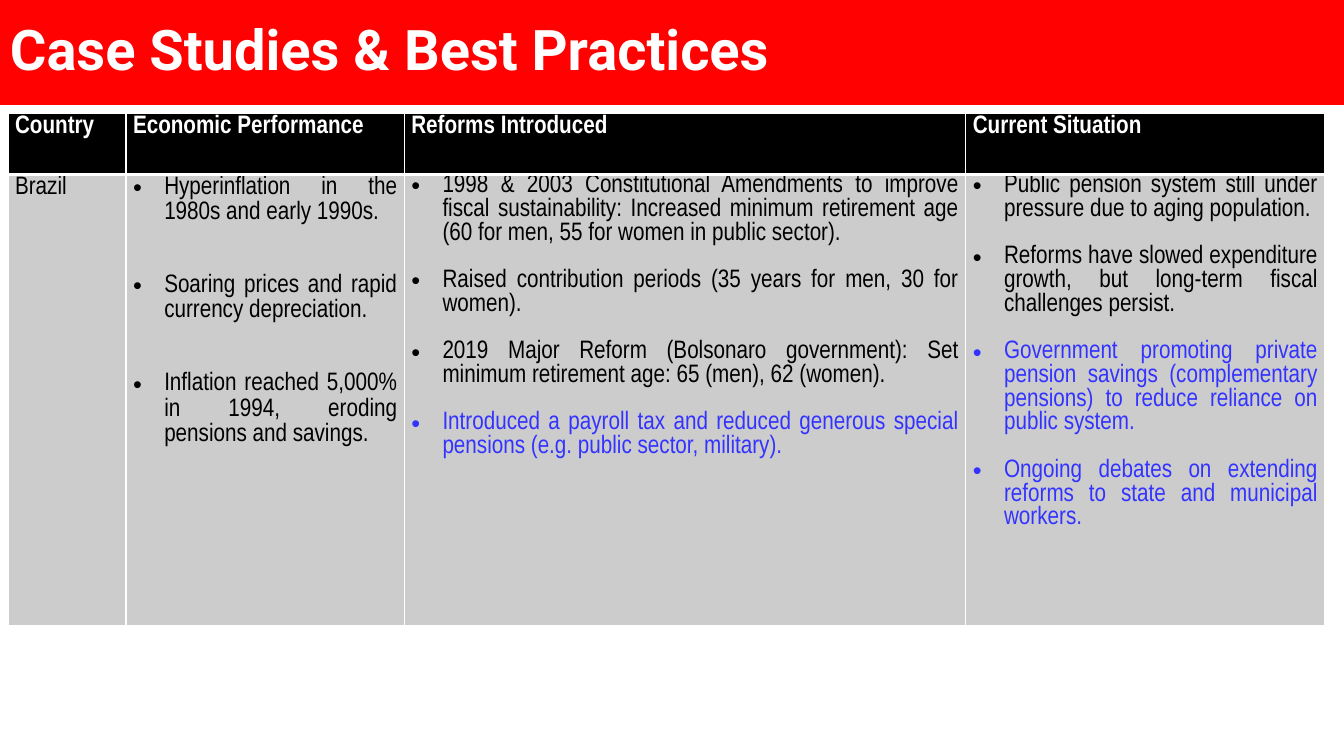
from lxml import etree
from pptx import Presentation
from pptx.dml.color import RGBColor
from pptx.enum import shapes, text
from pptx.oxml import ns
from pptx.util import Inches, Pt

COLORS = {"red": "FF0101", "white": "FFFFFF", "black": "000000",
          "grey": "CCCCCC", "blue": "3333FF"}


def rgb(name):
    return RGBColor.from_string(COLORS[name])


def child(parent, tag, **attrs):
    return etree.SubElement(parent, ns.qn(tag), {k: str(v) for k, v in attrs.items()})


def write(p, content, *, font="Arial Narrow", size=18, color="black", bold=False,
          align=text.PP_ALIGN.JUSTIFY, line=1.0, before=0, bullet=False):
    if bullet:
        pPr = p._p.get_or_add_pPr()
        pPr.set("marL", str(Inches(0.31)))
        pPr.set("indent", str(-Inches(0.31)))
        child(pPr, "a:buFont", typeface="Arial")
        child(pPr, "a:buChar", char="•")
    p.alignment = align
    p.line_spacing = line
    if before:
        p.space_before = Pt(before)
    r = p.add_run()
    r.text = content
    r.font.name, r.font.size, r.font.bold = font, Pt(size), bold
    r.font.color.rgb = rgb(color)


class SlideBuilder:
    def __init__(self, prs):
        self.s = prs.slides.add_slide(prs.slide_layouts[6])

    def title_bar(self, content):
        sp = self.s.shapes.add_shape(shapes.MSO_SHAPE.RECTANGLE, 0, Inches(-0.01),
                                     Inches(13.33), Inches(1.05))
        sp.shadow.inherit = False
        sp.fill.solid()
        sp.fill.fore_color.rgb = rgb("red")
        sp.line.fill.background()
        tf = sp.text_frame
        tf.word_wrap = True
        tf.vertical_anchor = text.MSO_ANCHOR.MIDDLE
        write(tf.paragraphs[0], content, font="Roboto", size=40, color="white",
              bold=True, align=text.PP_ALIGN.LEFT, line=0.9)

    def table(self, left, top, widths, heights):
        frame = self.s.shapes.add_table(len(heights), len(widths), Inches(left), Inches(top),
                                        Inches(sum(widths)), Inches(sum(heights)))
        tbl = frame.table
        tbl.first_row = tbl.horz_banding = False
        for column, width in zip(tbl.columns, widths):
            column.width = Inches(width)
        for row, height in zip(tbl.rows, heights):
            row.height = Inches(height)
        return tbl

    def cell(self, cell, items, fill, top=1, bottom=1, gap=0, **fmt):
        cell.margin_left = cell.margin_right = Inches(0.07)
        cell.margin_top = cell.margin_bottom = 0
        tcPr = cell._tc.get_or_add_tcPr()
        for side, width in (("L", 1), ("R", 1), ("T", top), ("B", bottom)):
            ln = child(tcPr, f"a:ln{side}", w=Pt(width))
            child(child(ln, "a:solidFill"), "a:srgbClr", val=COLORS["white"])
        cell.fill.solid()
        cell.fill.fore_color.rgb = rgb(fill)
        tf = cell.text_frame
        for i, (content, color) in enumerate(items):
            p = tf.paragraphs[0] if i == 0 else tf.add_paragraph()
            write(p, content, color=color, before=gap if i else 0, **fmt)


# Each column: heading, width, body items, body format
COLUMNS = [
    ("Country", 1.17, [("Brazil", "black")], dict(line=1.07)),
    ("Economic Performance", 2.76, [
        ("Hyperinflation in the 1980s and early 1990s.", "black"),
        ("Soaring prices and rapid currency depreciation.", "black"),
        ("Inflation reached 5,000% in 1994, eroding pensions and savings.", "black"),
    ], dict(line=1.07, gap=34, bullet=True)),
    ("Reforms Introduced", 5.57, [
        ("1998 & 2003 Constitutional Amendments to improve fiscal sustainability: "
         "Increased minimum retirement age (60 for men, 55 for women in public sector).",
         "black"),
        ("Raised contribution periods (35 years for men, 30 for women).", "black"),
        ("2019 Major Reform (Bolsonaro government): Set minimum retirement age: "
         "65 (men), 62 (women).", "black"),
        ("Introduced a payroll tax and reduced generous special pensions "
         "(e.g. public sector, military).", "blue"),
    ], dict(gap=17, bullet=True)),
    ("Current Situation", 3.56, [
        ("Public pension system still under pressure due to aging population.", "black"),
        ("Reforms have slowed expenditure growth, but long-term fiscal challenges persist.",
         "black"),
        ("Government promoting private pension savings (complementary pensions) "
         "to reduce reliance on public system.", "blue"),
        ("Ongoing debates on extending reforms to state and municipal workers.", "blue"),
    ], dict(gap=17, bullet=True)),
]


def main():
    prs = Presentation()
    prs.slide_width, prs.slide_height = Inches(13.33), Inches(7.5)
    slide = SlideBuilder(prs)

    # Title
    slide.title_bar("Case Studies & Best Practices")

    # Country table
    tbl = slide.table(0.08, 1.13, [column[1] for column in COLUMNS], [0.6, 4.48])
    for i, (heading, _, items, fmt) in enumerate(COLUMNS):
        slide.cell(tbl.cell(0, i), [(heading, "white")], "black", bottom=3,
                   bold=True, line=1.07)
        slide.cell(tbl.cell(1, i), items, "grey", top=3, **fmt)

    prs.save("out.pptx")


if __name__ == "__main__":
    main()
